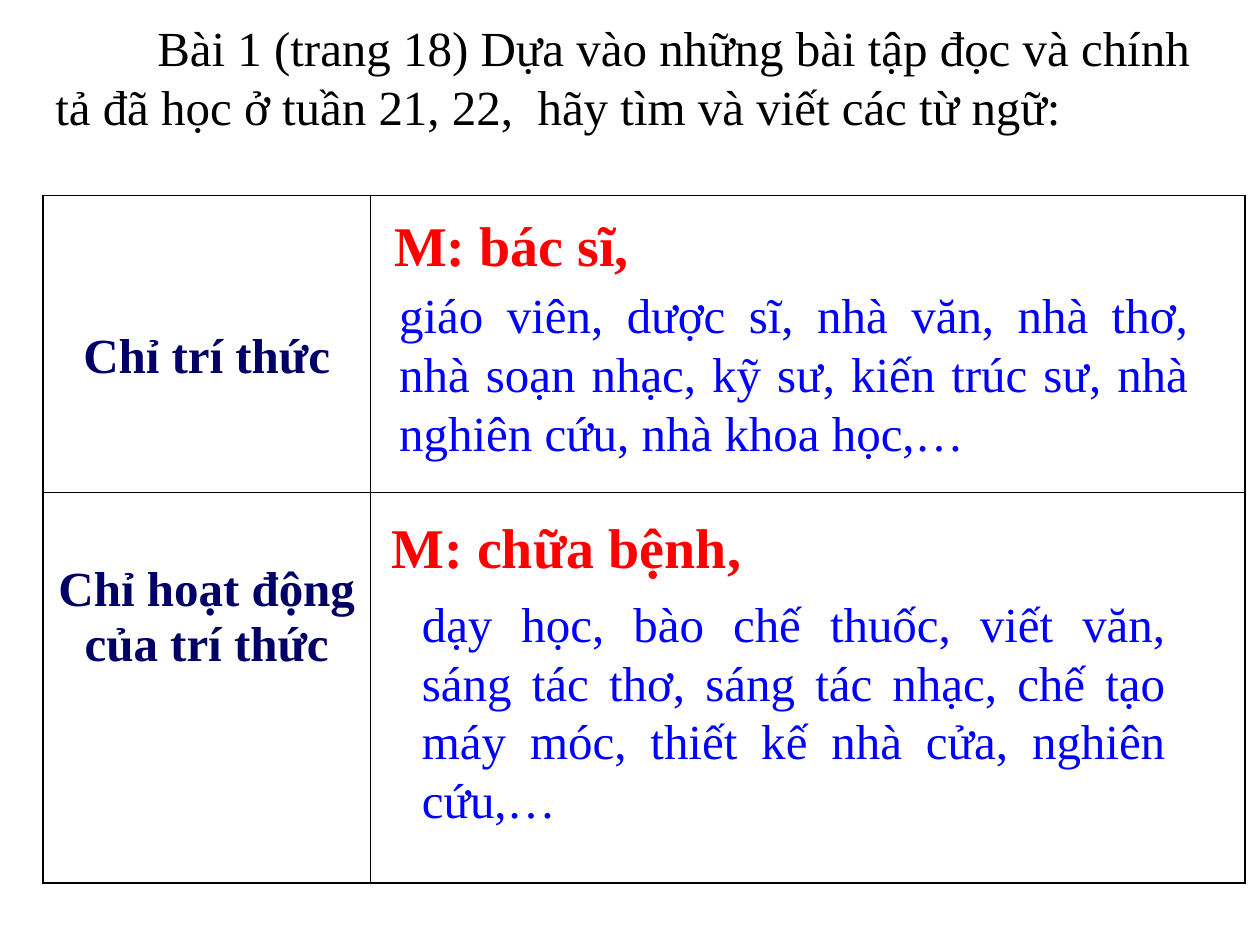
"""Build a Vietnamese vocabulary exercise slide with a two-row answer table."""
import pptx
import pptx.dml.color
import pptx.enum.text
import pptx.oxml
import pptx.oxml.ns
import pptx.util

Inches = pptx.util.Inches
Pt = pptx.util.Pt
ALIGN = pptx.enum.text.PP_ALIGN

FONT = "Times New Roman"
COLORS = {
    "title": "000000",
    "border": "000000",
    "label": "000066",
    "sample": "FF0000",
    "answer": "0000FF",
}
LINE_STEP = 0.51
ROWS = [
    ("Chỉ trí thức", 2.36, 2),
    ("Chỉ hoạt động của trí thức", 3.1, 1),
]
SAMPLES = [
    ("M: bác sĩ,", (3.03, 1.62, 2.2, 0.64)),
    ("M: chữa bệnh,", (3.01, 4.02, 3.11, 0.64)),
]
ANSWERS = [
    ("giáo viên, dược sĩ, nhà văn, nhà thơ, nhà soạn nhạc, kỹ sư, "
     "kiến trúc sư, nhà nghiên cứu, nhà khoa học,…", (3.07, 2.21, 6.46, 1.99)),
    ("dạy học, bào chế thuốc, viết văn, sáng tác thơ, sáng tác nhạc, "
     "chế tạo máy móc, thiết kế nhà cửa, nghiên cứu,…", (3.25, 4.66, 6.1, 2.46)),
]


def write(tf, text, color, size=28, bold=False, align=None, indent=None):
    p = tf.paragraphs[0]
    p.alignment = align
    if indent is not None:
        p._p.get_or_add_pPr().set("indent", str(Inches(indent)))
    r = p.add_run()
    r.text = text
    r.font.name = FONT
    r.font.size = Pt(size)
    r.font.bold = bold
    r.font.color.rgb = pptx.dml.color.RGBColor.from_string(COLORS[color])


def add_text(s, box, text, color, wrap=True, **fmt):
    sp = s.shapes.add_textbox(*map(Inches, box))
    tf = sp.text_frame
    tf.word_wrap = wrap
    tf.auto_size = pptx.enum.text.MSO_AUTO_SIZE.SHAPE_TO_FIT_TEXT
    write(tf, text, color, **fmt)


def set_borders(cell):
    tcPr = cell._tc.get_or_add_tcPr()
    ns = pptx.oxml.ns.nsdecls("a")
    for i, side in enumerate(("lnL", "lnR", "lnT", "lnB")):
        tcPr.insert(i, pptx.oxml.parse_xml(
            f'<a:{side} {ns} w="{Pt(1)}"><a:solidFill>'
            f'<a:srgbClr val="{COLORS["border"]}"/></a:solidFill></a:{side}>'))


def add_answer_table(s):
    box = map(Inches, (0.34, 1.55, 9.54, 5.46))
    table = s.shapes.add_table(len(ROWS), 2, *box).table
    table.first_row = False
    table.horz_banding = False
    for col, width in zip(table.columns, (2.6, 6.94)):
        col.width = Inches(width)
    for row, (label, height, skipped_lines) in zip(table.rows, ROWS):
        row.height = Inches(height)
        for cell in row.cells:
            cell.fill.background()
            set_borders(cell)
        cell = row.cells[0]
        cell.margin_top = Inches(0.05 + LINE_STEP * skipped_lines)
        write(cell.text_frame, label, "label", bold=True, align=ALIGN.CENTER)


def main():
    prs = pptx.Presentation()
    prs.slide_width, prs.slide_height = Inches(10), Inches(7.5)
    s = prs.slides.add_slide(prs.slide_layouts[6])
    add_text(s, (0.34, 0.09, 9.25, 1.04),
             "Bài 1 (trang 18) Dựa vào những bài tập đọc và chính tả "
             "đã học ở tuần 21, 22,  hãy tìm và viết các từ ngữ:",
             "title", indent=0.81)
    add_answer_table(s)
    for text, box in SAMPLES:
        add_text(s, box, text, "sample", wrap=False, size=32, bold=True)
    for text, box in ANSWERS:
        add_text(s, box, text, "answer", align=ALIGN.JUSTIFY)
    prs.save("out.pptx")


if __name__ == "__main__":
    main()
